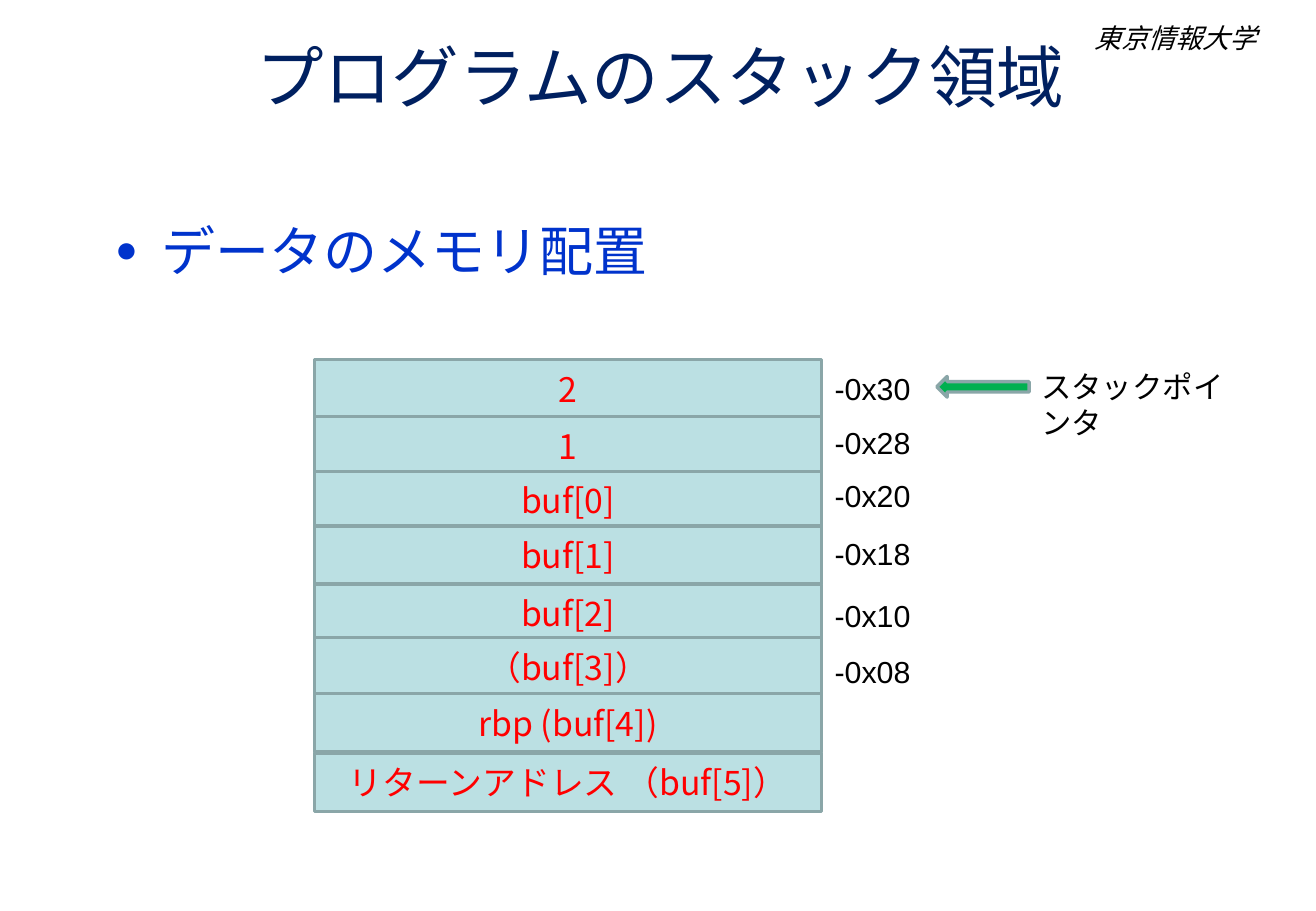
from pptx import Presentation
from pptx.dml.color import RGBColor
from pptx.enum.shapes import MSO_SHAPE as Shape
from pptx.enum.text import MSO_ANCHOR as Anchor, PP_ALIGN as Align
from pptx.oxml.ns import qn
from pptx.util import Pt
from lxml.etree import SubElement

PX = 9144  # 100 px to the inch
LATIN, JAPANESE = "Arial", "Noto Sans CJK JP"
COLORS = {
    "title": "002060", "bullet": "0033CC", "text": "000000", "value": "FF0000",
    "cell": "BBE0E3", "outline": "8AA6A8", "pointer": "00B050",
}


def add_span(para, text, size, color, font=LATIN, italic=False):
    span = para.add_run()
    span.text = text
    span.font.size = Pt(size)
    span.font.italic = italic
    span.font.color.rgb = RGBColor.from_string(COLORS[color])
    span.font.name = font
    SubElement(span.font._element, qn("a:ea"), typeface=JAPANESE)


def add_box(left, top, width, height, shape=None, fill="cell", wrap=False):
    """Add a text box, or an outlined shape with centred text, and return it."""
    area = [length * PX for length in (left, top, width, height)]
    if shape is None:
        box = page.shapes.add_textbox(*area)
    else:
        box = page.shapes.add_shape(shape, *area)
        box.shadow.inherit = False
        box.fill.solid()
        box.fill.fore_color.rgb = RGBColor.from_string(COLORS[fill])
        box.line.color.rgb = RGBColor.from_string(COLORS["outline"])
        box.line.width = Pt(2)
        box.text_frame.vertical_anchor = Anchor.MIDDLE
        box.text_frame.paragraphs[0].alignment = Align.CENTER
    box.text_frame.word_wrap = wrap
    return box


deck = Presentation()
deck.slide_width, deck.slide_height = 1083 * PX, 750 * PX
page = deck.slides.add_slide(deck.slide_layouts[6])

# Heading
school = add_box(891, 13, 153, 37)
add_span(school.text_frame.paragraphs[0], "東京情報大学", 16, "text", italic=True)

title = add_box(56, 0, 975, 125, wrap=True)
title.text_frame.vertical_anchor = Anchor.MIDDLE
para = title.text_frame.paragraphs[0]
para.alignment = Align.CENTER
add_span(para, "プログラムのスタック領域", 40, "title")

# Bullet
body = add_box(85, 174, 981, 96, wrap=True)
para = body.text_frame.paragraphs[0]
props = para._p.get_or_add_pPr()
props.set("marL", str(38 * PX))
props.set("indent", str(-38 * PX))
bullet_color = SubElement(props, qn("a:buClr"))
SubElement(bullet_color, qn("a:srgbClr"), val=COLORS["bullet"])
SubElement(props, qn("a:buSzPct"), val="70000")
SubElement(props, qn("a:buFont"), typeface=LATIN)
SubElement(props, qn("a:buChar"), char="●")
add_span(para, "データのメモリ配置", 32, "bullet", JAPANESE)

# Stack: cell top, cell text, offset top, offset
stack = [
    (296, "2", 300, "-0x30"),
    (343, "1", 344, "-0x28"),
    (388, "buf[0]", 388, "-0x20"),
    (433, "buf[1]", 436, "-0x18"),
    (481, "buf[2]", 487, "-0x10"),
    (525, "（buf[3]）", 533, "-0x08"),
    (571, "rbp (buf[4])", None, None),
    (620, "リターンアドレス （buf[5]）", None, None),
]
for cell_top, value, offset_top, offset in stack:
    cell = add_box(259, cell_top, 417, 48, Shape.RECTANGLE, wrap=True)
    add_span(cell.text_frame.paragraphs[0], value, 20, "value", JAPANESE)
    if offset:
        label = add_box(677, offset_top, 83, 40)
        add_span(label.text_frame.paragraphs[0], offset, 18, "text")

# Stack pointer
add_box(771, 310, 76, 17, Shape.LEFT_ARROW, "pointer")
pointer = add_box(847, 298, 187, 40, wrap=True)
add_span(pointer.text_frame.paragraphs[0], "スタックポインタ", 18, "text")

deck.save("out.pptx")
